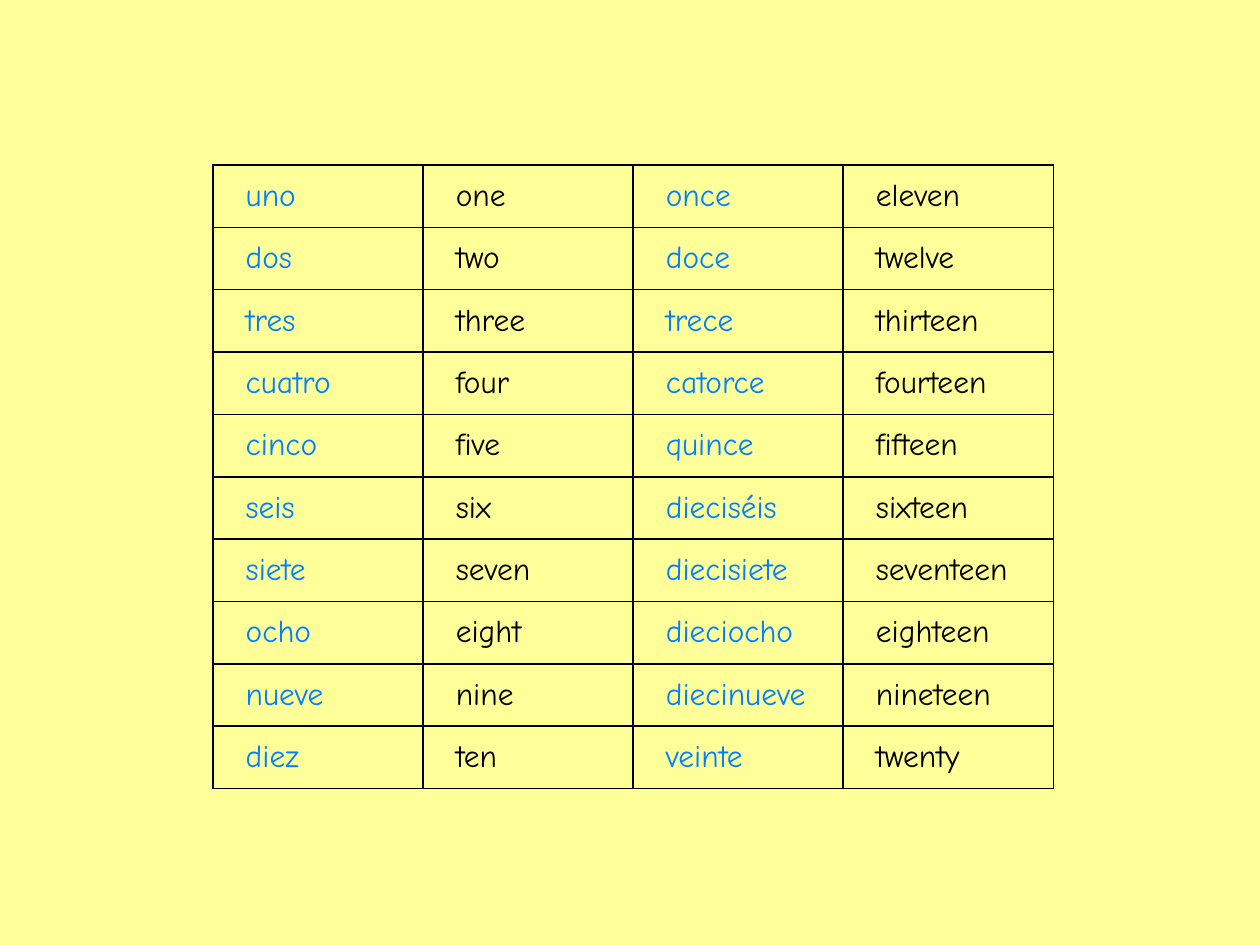
from lxml.etree import SubElement
from pptx import Presentation
from pptx.dml.color import RGBColor
from pptx.enum.text import MSO_ANCHOR as Anchor
from pptx.oxml.ns import qn
from pptx.util import Inches, Pt

YELLOW = RGBColor(0xFF, 0xFF, 0x99)
BLUE = RGBColor(0x00, 0x80, 0xFF)
BLACK = RGBColor(0x00, 0x00, 0x00)

NUMBERS = [
    ("uno", "one", "once", "eleven"),
    ("dos", "two", "doce", "twelve"),
    ("tres", "three", "trece", "thirteen"),
    ("cuatro", "four", "catorce", "fourteen"),
    ("cinco", "five", "quince", "fifteen"),
    ("seis", "six", "dieciséis", "sixteen"),
    ("siete", "seven", "diecisiete", "seventeen"),
    ("ocho", "eight", "dieciocho", "eighteen"),
    ("nueve", "nine", "diecinueve", "nineteen"),
    ("diez", "ten", "veinte", "twenty"),
]


class Deck:
    font = {"name": "Comic Neue", "size": Pt(18), "bold": False}
    cell = {
        "margin_left": Inches(0.26),
        "margin_right": Inches(0.1),
        "margin_top": Inches(0.05),
        "margin_bottom": Inches(0.05),
        "vertical_anchor": Anchor.MIDDLE,
    }

    def __init__(self):
        self.prs = Presentation()
        self.prs.slide_width, self.prs.slide_height = Inches(10), Inches(7.5)

    def slide(self, color):
        self.s = self.prs.slides.add_slide(self.prs.slide_layouts[6])
        fill = self.s.background.fill
        fill.solid()
        fill.fore_color.rgb = color

    def table(self, rows, left, top, width, height, column_colors):
        frame = self.s.shapes.add_table(
            len(rows), len(column_colors),
            Inches(left), Inches(top), Inches(width), Inches(height))
        table = frame.table
        table.first_row = table.horz_banding = False
        for i, row in enumerate(rows):
            for j, (word, color) in enumerate(zip(row, column_colors)):
                self.fill_cell(table.cell(i, j), word, color)

    def fill_cell(self, cell, word, color):
        for name, value in self.cell.items():
            setattr(cell, name, value)
        self.borders(cell)
        cell.fill.background()
        r = cell.text_frame.paragraphs[0].add_run()
        r.text = word
        for name, value in self.font.items():
            setattr(r.font, name, value)
        r.font.color.rgb = color

    def borders(self, cell, color=BLACK, width=Pt(1)):
        """Outline all four sides; must come before the cell's fill."""
        props = cell._tc.get_or_add_tcPr()
        for side in ("lnL", "lnR", "lnT", "lnB"):
            line = SubElement(props, qn(f"a:{side}"), w=str(width))
            fill = SubElement(line, qn("a:solidFill"))
            SubElement(fill, qn("a:srgbClr"), val=str(color))


def main():
    deck = Deck()
    deck.slide(YELLOW)
    deck.table(NUMBERS, 1.69, 1.31, 6.67, 4.95, [BLUE, BLACK] * 2)
    deck.prs.save("out.pptx")


if __name__ == "__main__":
    main()
